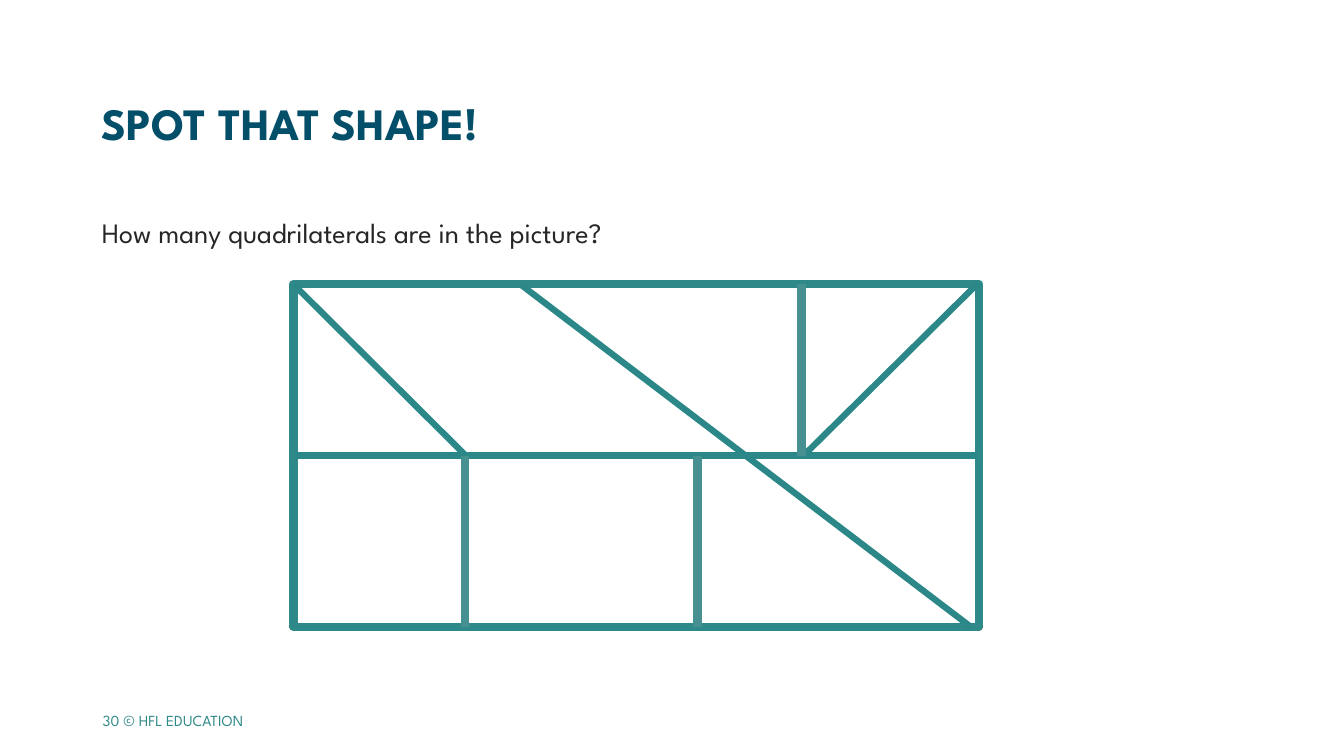
from dataclasses import dataclass

from pptx import Presentation
from pptx.dml.color import RGBColor
from pptx.enum.shapes import MSO_CONNECTOR, MSO_SHAPE
from pptx.enum.text import MSO_ANCHOR, MSO_AUTO_SIZE, PP_ALIGN
from pptx.oxml.ns import qn
from pptx.shapes.autoshape import Shape
from pptx.shapes.connector import Connector
from pptx.shapes.group import GroupShape
from pptx.util import Inches, Pt
from lxml.etree import SubElement

FONT = "League Spartan"
COLOURS = {
    "title": "034E69",
    "body": "262626",
    "frame": "2F8989",
    "divider": "2C8888",
    "upright": "469091",
    "white": "FFFFFF",
}
LEFT, TOP, WIDTH, HEIGHT = 2.91, 2.82, 6.8, 3.4
RIGHT, BOTTOM, MIDDLE = LEFT + WIDTH, TOP + HEIGHT, TOP + HEIGHT / 2


@dataclass(frozen=True)
class TextStyle:
    size: float
    colour: str
    anchor: MSO_ANCHOR
    bold: bool = False


@dataclass(frozen=True)
class Segment:
    start_x: float
    start_y: float
    end_x: float
    end_y: float
    colour: str = "divider"
    width: float = 4.5


def upright(x: float, top: float) -> Segment:
    return Segment(x, top, x, top + HEIGHT / 2, "upright", 6)


MIDLINE = Segment(LEFT, MIDDLE, RIGHT, MIDDLE)
SEGMENTS = [
    Segment(LEFT, TOP, 4.65, 4.55),
    Segment(RIGHT, 2.8, 7.97, MIDDLE),
    upright(4.61, MIDDLE),
    upright(6.92, MIDDLE),
    upright(7.95, TOP),
    Segment(5.16, TOP, 9.63, BOTTOM),
]


def colour_of(name: str) -> RGBColor:
    return RGBColor.from_string(COLOURS[name])


def place(shape: Shape, left: float, top: float, width: float, height: float) -> None:
    shape.left, shape.top = Inches(left), Inches(top)
    shape.width, shape.height = Inches(width), Inches(height)


def write(shape: Shape, text: str, style: TextStyle) -> None:
    frame = shape.text_frame
    frame.text = text
    frame.word_wrap = True
    frame.auto_size = MSO_AUTO_SIZE.NONE
    frame.vertical_anchor = style.anchor
    paragraph = frame.paragraphs[0]
    paragraph.alignment = PP_ALIGN.LEFT
    paragraph.space_before = Pt(0)
    if shape.is_placeholder:
        properties = paragraph._p.get_or_add_pPr()
        properties.set("marL", "0")
        properties.set("indent", "0")
        SubElement(properties, qn("a:buNone"))
    paragraph.font.name = FONT
    paragraph.font.size = Pt(style.size)
    paragraph.font.bold = style.bold
    paragraph.font.color.rgb = colour_of(style.colour)


def draw_segment(group: GroupShape, segment: Segment) -> Connector:
    connector = group.shapes.add_connector(
        MSO_CONNECTOR.STRAIGHT,
        Inches(segment.start_x), Inches(segment.start_y),
        Inches(segment.end_x), Inches(segment.end_y),
    )
    connector.line.color.rgb = colour_of(segment.colour)
    connector.line.width = Pt(segment.width)
    SubElement(connector._element.spPr, qn("a:effectLst"))
    return connector


def draw_puzzle(group: GroupShape) -> None:
    rectangle = group.shapes.add_shape(
        MSO_SHAPE.RECTANGLE, Inches(LEFT), Inches(TOP), Inches(WIDTH), Inches(HEIGHT)
    )
    rectangle.shadow.inherit = False
    rectangle.fill.solid()
    rectangle.fill.fore_color.rgb = colour_of("white")
    rectangle.line.color.rgb = colour_of("frame")
    rectangle.line.width = Pt(6)
    midline = draw_segment(group, MIDLINE)
    midline.begin_connect(rectangle, 1)
    midline.end_connect(rectangle, 3)
    for segment in SEGMENTS:
        draw_segment(group, segment)


def main() -> None:
    presentation = Presentation()
    presentation.slide_width = Inches(13.33)
    presentation.slide_height = Inches(7.5)
    slide = presentation.slides.add_slide(presentation.slide_layouts[1])

    title = slide.shapes.title
    place(title, 0.91, 0.59, 9.84, 1.26)
    write(title, "SPOT THAT SHAPE!", TextStyle(32, "title", MSO_ANCHOR.MIDDLE, True))

    question = slide.placeholders[1]
    place(question, 0.91, 2.09, 9.84, 4.13)
    write(question, "How many quadrilaterals are in the picture?",
          TextStyle(20, "body", MSO_ANCHOR.TOP))
    question.text_frame.paragraphs[0].space_after = Pt(12)

    draw_puzzle(slide.shapes.add_group_shape())

    footer = slide.shapes.add_textbox(Inches(0.92), Inches(6.95), Inches(2.75), Inches(0.4))
    write(footer, "30 © HFL EDUCATION", TextStyle(11, "frame", MSO_ANCHOR.MIDDLE))
    presentation.save("out.pptx")


if __name__ == "__main__":
    main()
